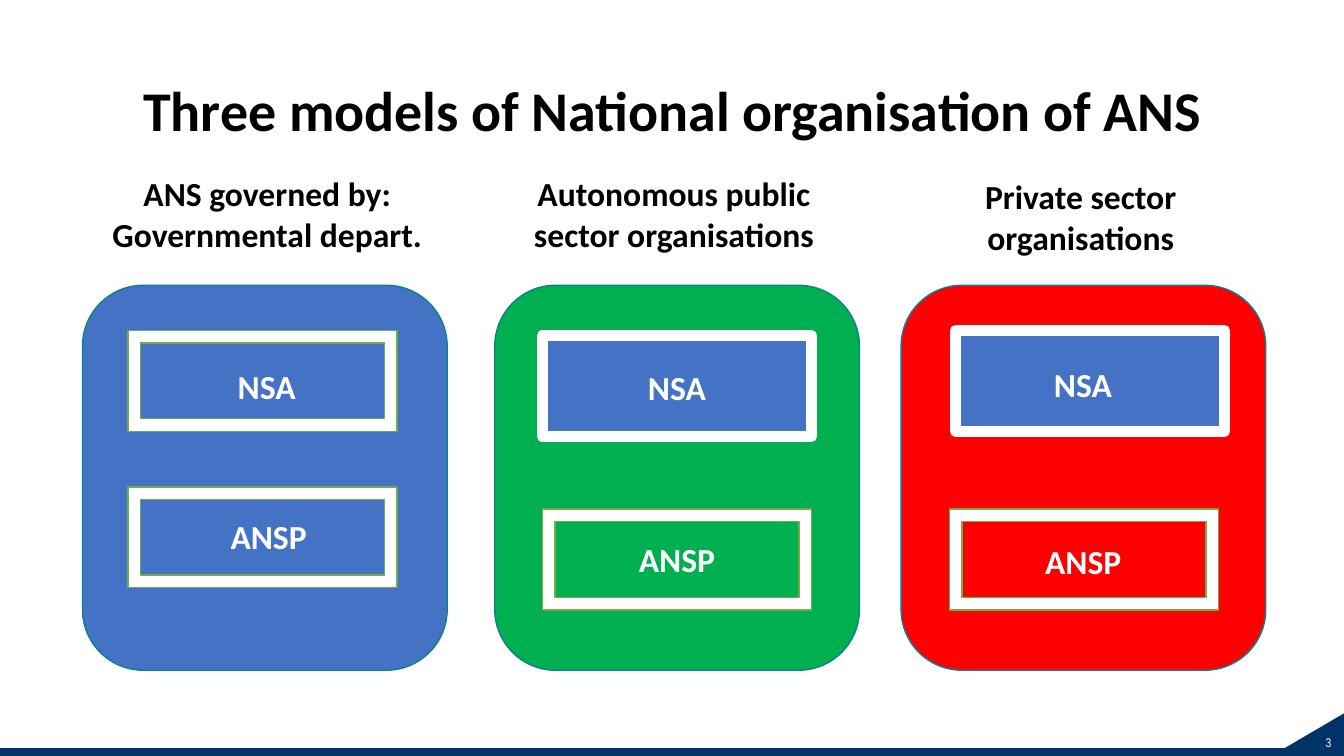
from dataclasses import dataclass

from pptx import Presentation
from pptx import util as u
from pptx.dml.color import RGBColor
from pptx.enum import shapes, text
from pptx.shapes.autoshape import Shape
from pptx.slide import Slide


@dataclass(frozen=True)
class Theme:
    navy: str = "003469"
    blue: str = "4472C4"
    green: str = "00B050"
    red: str = "FF0000"
    teal: str = "0C8092"
    leaf: str = "70AD47"
    white: str = "FFFFFF"
    black: str = "000000"
    font: str = "Calibri"
    number_font: str = "Arial Narrow"
    title_size: int = 40
    body_size: int = 24
    number_size: int = 9


@dataclass(frozen=True)
class Body:
    """An organisation: box corner, label corner and label width, in cm."""
    name: str
    left: float
    top: float
    label_left: float
    label_top: float
    label_width: float
    framed: bool = True


@dataclass(frozen=True)
class Model:
    heading: tuple[str, ...]
    heading_left: float
    heading_top: float
    heading_width: float
    panel_left: float
    color: str
    bodies: tuple[Body, ...]


THEME = Theme()
SLIDE_W, SLIDE_H = 33.87, 19.05
PANEL_TOP, PANEL_W, PANEL_H = 7.19, 9.19, 9.7
BODY_W, BODY_H = 6.78, 2.54
HEADING_H, LABEL_H = 2.31, 1.27
NSA_W, ANSP_W = 1.98, 2.44

MODELS = (
    Model(("ANS governed by:", "Governmental depart."), 2.44, 4.24, 8.59, 2.08, THEME.blue, (
        Body("NSA", 3.23, 8.33, 5.74, 9.09, NSA_W),
        Body("ANSP", 3.23, 12.27, 5.56, 12.88, ANSP_W))),
    Model(("Autonomous public", "sector organisations"), 13.06, 4.24, 7.85, 12.47, THEME.green, (
        Body("NSA", 13.67, 8.46, 16.08, 9.12, NSA_W, framed=False),
        Body("ANSP", 13.67, 12.83, 15.85, 13.46, ANSP_W))),
    Model(("Private sector", "organisations"), 24.44, 4.32, 5.59, 22.71, THEME.red, (
        Body("NSA", 24.08, 8.33, 26.31, 9.04, NSA_W, framed=False),
        Body("ANSP", 23.93, 12.83, 26.09, 13.51, ANSP_W))),
)


def add_box(slide: Slide, kind: shapes.MSO_SHAPE, left: float, top: float,
            width: float, height: float, fill: str,
            line: str | None = None, line_width: float = 1) -> Shape:
    box = slide.shapes.add_shape(kind, u.Cm(left), u.Cm(top), u.Cm(width), u.Cm(height))
    box.shadow.inherit = False
    box.fill.solid()
    box.fill.fore_color.rgb = RGBColor.from_string(fill)
    if line is None:
        box.line.fill.background()
    else:
        box.line.color.rgb = RGBColor.from_string(line)
        box.line.width = u.Pt(line_width)
    return box


def add_text(slide: Slide, lines: tuple[str, ...], left: float, top: float,
             width: float, height: float, *, size: int = THEME.body_size,
             color: str = THEME.black, font: str = THEME.font, bold: bool = True,
             align: text.PP_ALIGN = text.PP_ALIGN.CENTER,
             anchor: text.MSO_ANCHOR = text.MSO_ANCHOR.TOP,
             wrap: bool = False, spacing: float = 1.0) -> None:
    area = slide.shapes.add_textbox(u.Cm(left), u.Cm(top), u.Cm(width), u.Cm(height))
    frame = area.text_frame
    frame.word_wrap = wrap
    frame.vertical_anchor = anchor
    for index, line in enumerate(lines):
        paragraph = frame.add_paragraph() if index else frame.paragraphs[0]
        paragraph.alignment = align
        paragraph.line_spacing = spacing
        run = paragraph.add_run()
        run.text = line
        run.font.name = font
        run.font.size = u.Pt(size)
        run.font.bold = bold
        run.font.color.rgb = RGBColor.from_string(color)


def draw_body(slide: Slide, body: Body) -> None:
    place = (body.left, body.top, BODY_W, BODY_H)
    if body.framed:
        add_box(slide, shapes.MSO_SHAPE.FRAME, *place, THEME.white, THEME.leaf)
    else:
        add_box(slide, shapes.MSO_SHAPE.RECTANGLE, *place, THEME.blue, THEME.white, 8)
    add_text(slide, (body.name,), body.label_left, body.label_top, body.label_width,
             LABEL_H, color=THEME.white, align=text.PP_ALIGN.LEFT)


def draw_model(slide: Slide, model: Model) -> None:
    add_text(slide, model.heading, model.heading_left, model.heading_top,
             model.heading_width, HEADING_H)
    add_box(slide, shapes.MSO_SHAPE.ROUNDED_RECTANGLE, model.panel_left, PANEL_TOP,
            PANEL_W, PANEL_H, model.color, THEME.teal)
    for body in model.bodies:
        draw_body(slide, body)


def draw_footer(slide: Slide) -> None:
    corner = add_box(slide, shapes.MSO_SHAPE.ISOSCELES_TRIANGLE,
                     32.21, 17.93, 2.26, 1.02, THEME.navy)
    corner.adjustments[0] = 0.77
    add_box(slide, shapes.MSO_SHAPE.RECTANGLE, 0, 18.85, SLIDE_W, 0.2, THEME.navy)
    add_text(slide, ("3",), 32.33, 18.47, 1.47, 0.48, size=THEME.number_size,
             color=THEME.white, font=THEME.number_font, bold=False, wrap=True,
             align=text.PP_ALIGN.RIGHT, anchor=text.MSO_ANCHOR.MIDDLE)


def main() -> None:
    deck = Presentation()
    deck.slide_width, deck.slide_height = u.Cm(SLIDE_W), u.Cm(SLIDE_H)
    slide = deck.slides.add_slide(deck.slide_layouts[6])

    # Footer band with the slide number
    draw_footer(slide)

    # Title
    add_text(slide, ("Three models of National organisation of ANS",),
             2.34, 1.02, 29.21, 3.68, size=THEME.title_size, wrap=True,
             anchor=text.MSO_ANCHOR.MIDDLE, spacing=0.9)

    # One column for each model
    for model in MODELS:
        draw_model(slide, model)

    deck.save("out.pptx")


if __name__ == "__main__":
    main()
